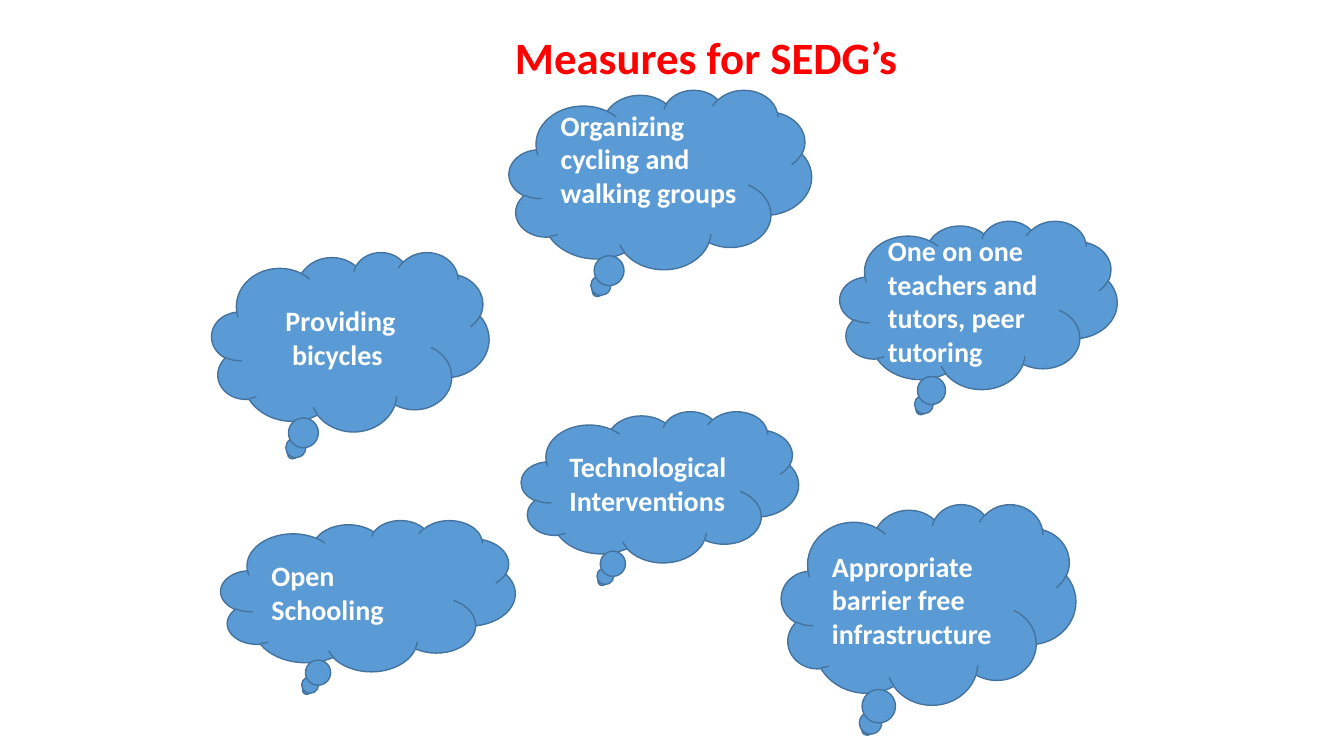
"""Build a slide of thought clouds listing measures for SEDG's."""
from pptx import Presentation
from pptx.dml.color import RGBColor
from pptx.enum.shapes import MSO_SHAPE
from pptx.enum.text import MSO_ANCHOR, PP_ALIGN
from pptx.util import Inches, Pt

FONT = "Calibri"
RED = RGBColor(0xFF, 0x00, 0x00)
WHITE = RGBColor(0xFF, 0xFF, 0xFF)
CLOUD_BLUE = RGBColor(0x5B, 0x9B, 0xD5)
OUTLINE_BLUE = RGBColor(0x43, 0x73, 0x9E)

TITLE = "Measures for SEDG’s"
TITLE_BOX = (4.92, 0.25, 4.17, 0.64)
LEFT, CENTER = PP_ALIGN.LEFT, PP_ALIGN.CENTER
BOTTOM_INSET, RAISED_INSET = 0.05, 0.38

MEASURES = [
    ("Technological Interventions", (5.17, 4.08, 2.75, 1.5), LEFT, BOTTOM_INSET),
    ("Open Schooling", (2.19, 5.16, 2.92, 1.5), LEFT, BOTTOM_INSET),
    ("Appropriate barrier free infrastructure", (7.75, 5, 2.92, 1.99), LEFT, BOTTOM_INSET),
    ("Providing bicycles ", (2.1, 2.5, 2.75, 1.78), CENTER, BOTTOM_INSET),
    ("Organizing cycling and walking groups", (5.05, 0.89, 3, 1.78), LEFT, RAISED_INSET),
    ("One on one teachers and tutors, peer tutoring", (8.33, 2.19, 2.75, 1.67), LEFT, BOTTOM_INSET),
]


def write(frame, text, size, color, align):
    frame.word_wrap = True
    paragraph = frame.paragraphs[0]
    paragraph.alignment = align
    run = paragraph.add_run()
    run.text = text
    run.font.name = FONT
    run.font.size = Pt(size)
    run.font.bold = True
    run.font.color.rgb = color


def add_cloud(slide, measure, box, align, bottom_inset):
    cloud = slide.shapes.add_shape(MSO_SHAPE.CLOUD_CALLOUT, *map(Inches, box))
    cloud.shadow.inherit = False
    cloud.fill.solid()
    cloud.fill.fore_color.rgb = CLOUD_BLUE
    cloud.line.color.rgb = OUTLINE_BLUE
    cloud.line.width = Pt(1)
    cloud.text_frame.vertical_anchor = MSO_ANCHOR.MIDDLE
    cloud.text_frame.margin_bottom = Inches(bottom_inset)
    write(cloud.text_frame, measure, 20, WHITE, align)


def main():
    deck = Presentation()
    deck.slide_width, deck.slide_height = Inches(13.33), Inches(7.5)
    slide = deck.slides.add_slide(deck.slide_layouts[6])
    title = slide.shapes.add_textbox(*map(Inches, TITLE_BOX))
    write(title.text_frame, TITLE, 32, RED, CENTER)
    for measure in MEASURES:
        add_cloud(slide, *measure)
    deck.save("out.pptx")


if __name__ == "__main__":
    main()
